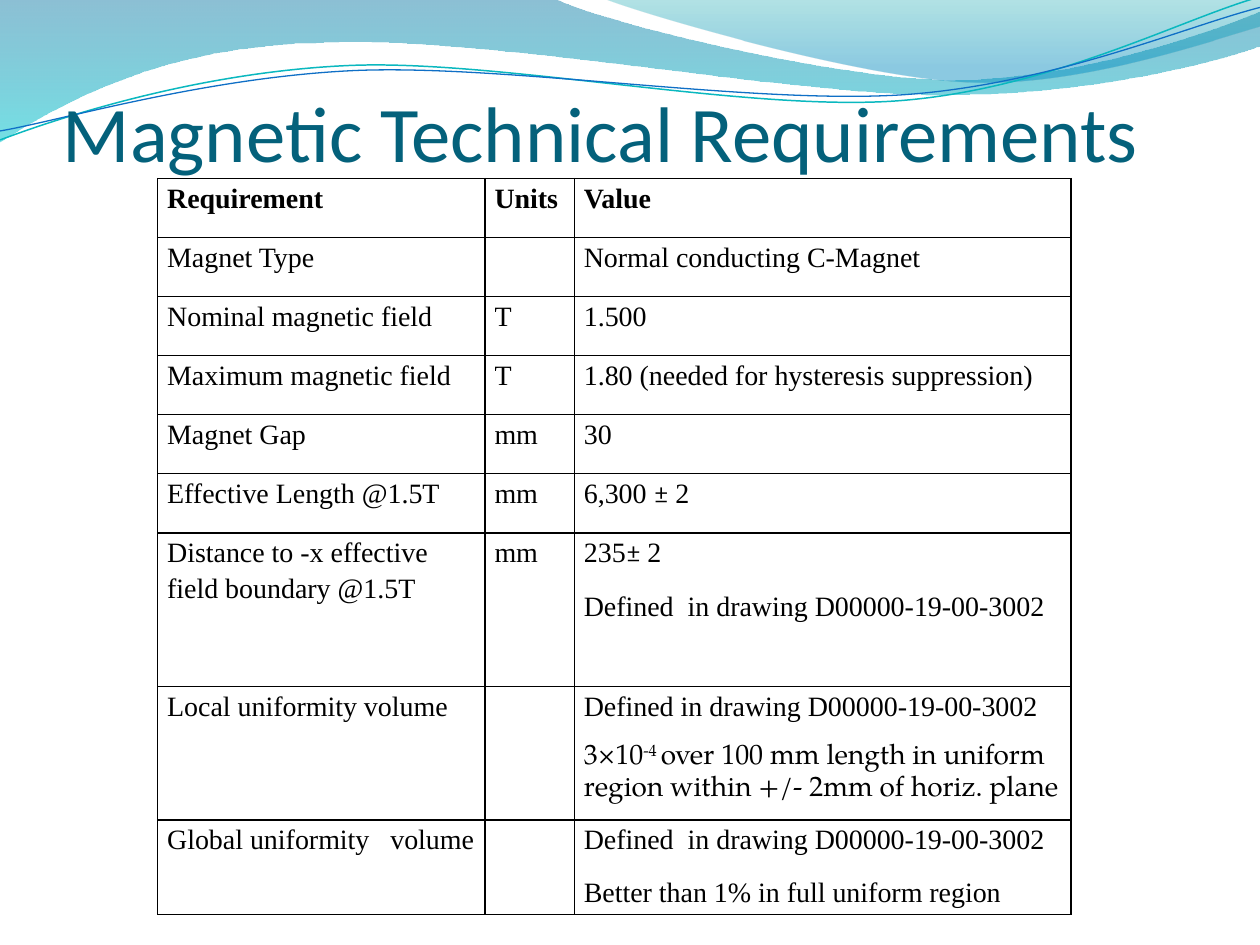
import math
from dataclasses import dataclass

from lxml import etree
from pptx import Presentation
from pptx.dml.color import RGBColor
from pptx.enum import text as text_enum
from pptx.oxml import ns
from pptx.util import Cm, Pt


@dataclass(frozen=True)
class Theme:
    """Colours, fonts and type sizes of the slide."""
    title: str = "04617B"
    ink: str = "000000"
    teal_line: str = "0AB8BF"
    blue_line: str = "0F6FC6"
    left_wave: tuple = ((0, "0074A1", 45), (1, "00C6CF", 55))
    right_wave: tuple = ((0, "00A1A9", 30), (0.8, "008BBF", 45))
    title_font: str = "Calibri"
    body_font: str = "Times New Roman"
    sign_font: str = "Cambria"
    note_font: str = "TeX Gyre Pagella"
    title_size: int = 45
    body_size: int = 16
    border: float = 1


THEME = Theme()

CURVE_TILT = 2.7
LEFT_WAVE = [(0, -0.03), (11.18, -0.03),
             (12.09, 0.43, 16.87, 1.6, 19.25, 1.6),
             (21.67, 1.6, 24.33, 0.66, 25.4, 0.23), (25.43, 0.91),
             (24.97, 1.12, 22.1, 1.93, 18.95, 1.91),
             (15.8, 1.91, 9.7, 0.71, 6.53, 0.86),
             (3.28, 0.89, 1.17, 2.11, -0.03, 2.87), (0, -0.03)]
RIGHT_WAVE = [(12.17, -0.03), (12.93, 0.28, 17.32, 1.57, 19.53, 1.65),
              (21.74, 1.75, 24.41, 0.81, 25.4, 0.53), (25.4, 0), (12.17, -0.03)]
TEAL_CURVE = [(0, 2.82), (1.22, 2.36, 4.01, 1.45, 7.04, 1.32),
              (10.03, 1.19, 15.06, 2.26, 18.11, 2.03),
              (21.16, 1.8, 23.83, 0.38, 25.35, -0.05)]
BLUE_CURVE = [(0, 2.64), (1.19, 2.44, 4.17, 1.55, 7.19, 1.42),
              (10.24, 1.3, 15.16, 2.11, 18.21, 1.91),
              (21.23, 1.7, 23.9, 0.53, 25.4, 0.15)]

PLUS_MINUS = ("± ", {"name": THEME.sign_font})
NOTE = {"name": THEME.note_font}
COLUMNS = (6.6, 1.8, 10.01)
ROW_HEIGHTS = [1.19] * 6 + [3.1, 2.36, 1.8]
ROWS = [
    ("Requirement", "Units", ["Value"]),
    ("Magnet Type", "", ["Normal conducting C-Magnet"]),
    ("Nominal magnetic field", "T", ["1.500"]),
    ("Maximum magnetic field", "T", ["1.80 (needed for hysteresis suppression)"]),
    ("Magnet Gap", "mm", ["30"]),
    ("Effective Length @1.5T", "mm", [[("6,300 ", {}), PLUS_MINUS, ("2", {})]]),
    ("Distance to -x effective field boundary @1.5T", "mm",
     [[("235", {}), PLUS_MINUS, ("2", {})],
      "Defined  in drawing D00000-19-00-3002"]),
    ("Local uniformity volume", "",
     ["Defined in drawing D00000-19-00-3002",
      [("3×10", NOTE), ("-4 ", {**NOTE, "superscript": True}),
       ("over 100 mm length in uniform region within +/- 2mm of horiz. plane", NOTE)]]),
    ("Global uniformity   volume", "",
     ["Defined  in drawing D00000-19-00-3002",
      "Better than 1% in full uniform region"]),
]


def apply_format(target, values):
    """Set each named attribute on the target."""
    for name, value in values.items():
        setattr(target, name, value)


def turn(segment, degrees, centre=(12.67, 1.46)):
    """Turn the points of a segment about a centre, giving (x, y) lengths."""
    sine, cosine = math.sin(math.radians(degrees)), math.cos(math.radians(degrees))
    points = []
    for x, y in zip(segment[::2], segment[1::2]):
        x, y = x - centre[0], y - centre[1]
        points.append((Cm(centre[0] + x * cosine - y * sine),
                       Cm(centre[1] + x * sine + y * cosine)))
    return points


def add_outline(slide, segments, close, tilt=0):
    """Add a freeform of straight and cubic segments without shadow."""
    turned = [turn(segment, tilt) for segment in segments]
    ends = [points[-1] for points in turned]
    builder = slide.shapes.build_freeform(*ends[0])
    builder.add_line_segments(ends[1:], close=close)
    shape = builder.convert_to_shape()
    shape.shadow.inherit = False
    left, top = (min(axis) for axis in zip(*ends))
    lines = list(shape._element.iter(ns.qn("a:lnTo")))
    for line, points in zip(lines, turned[1:]):
        if len(points) == 3:
            cubic = etree.Element(ns.qn("a:cubicBezTo"))
            for x, y in points:
                etree.SubElement(cubic, ns.qn("a:pt"), x=str(x - left), y=str(y - top))
            line.getparent().replace(line, cubic)
    shape.rotation = -tilt
    return shape


def add_wave(slide, segments, stops):
    """Add a closed wave with a translucent vertical gradient."""
    shape = add_outline(slide, segments, True)
    shape.line.fill.background()
    shape.fill.gradient()
    shape.fill.gradient_angle = 270
    for stop, (position, colour, _) in zip(shape.fill.gradient_stops, stops):
        stop.position = position
        stop.color.rgb = RGBColor.from_string(colour)
    for node, (_, _, opacity) in zip(shape._element.iter(ns.qn("a:srgbClr")), stops):
        etree.SubElement(node, ns.qn("a:alpha"), val=str(opacity * 1000))


def add_curve(slide, segments, colour, width):
    """Add an open, tilted curved line."""
    shape = add_outline(slide, segments, False, CURVE_TILT)
    shape.fill.background()
    shape.line.color.rgb = RGBColor.from_string(colour)
    shape.line.width = Pt(width)


def add_run(paragraph, content, colour, values):
    """Add one formatted run."""
    run = paragraph.add_run()
    run.text = content
    values = dict(values)
    if values.pop("superscript", False):
        run._r.get_or_add_rPr().set("baseline", "30000")
    apply_format(run.font, values)
    run.font.color.rgb = RGBColor.from_string(colour)


def add_title(slide, content):
    """Add the bottom-anchored title."""
    frame = slide.shapes.add_textbox(Cm(1.27), Cm(0.85), Cm(22.86), Cm(2.74)).text_frame
    apply_format(frame, {"word_wrap": True, "margin_left": 0, "margin_right": 0,
                         "margin_top": Cm(0.13), "margin_bottom": 0,
                         "vertical_anchor": text_enum.MSO_ANCHOR.BOTTOM})
    add_run(frame.paragraphs[0], content, THEME.title,
            {"name": THEME.title_font, "size": Pt(THEME.title_size)})


def style_cell(cell):
    """Give a cell its margins, borders and empty fill."""
    apply_format(cell, {"margin_left": Cm(0.19), "margin_right": Cm(0.19),
                        "margin_top": 0, "margin_bottom": 0})
    properties = cell._tc.get_or_add_tcPr()
    for side in "LRTB":
        line = etree.SubElement(properties, ns.qn(f"a:ln{side}"), w=str(Pt(THEME.border)))
        fill = etree.SubElement(line, ns.qn("a:solidFill"))
        etree.SubElement(fill, ns.qn("a:srgbClr"), val=THEME.ink)
    cell.fill.background()


def fill_cell(cell, paragraphs, bold):
    """Write paragraphs, each a string or a list of runs, into a cell."""
    base = {"name": THEME.body_font, "size": Pt(THEME.body_size), "bold": bold}
    frame = cell.text_frame
    for index, content in enumerate(paragraphs):
        paragraph = frame.add_paragraph() if index else frame.paragraphs[0]
        apply_format(paragraph, {"line_spacing": 1.15, "space_after": Pt(0 if index else 10)})
        runs = [(content, {})] if isinstance(content, str) else content
        for words, values in runs:
            if words:
                add_run(paragraph, words, THEME.ink, {**base, **values})


def add_requirements(slide):
    """Add the table of requirements."""
    table = slide.shapes.add_table(len(ROWS), len(COLUMNS), Cm(3.18), Cm(3.6),
                                   Cm(sum(COLUMNS)), Cm(sum(ROW_HEIGHTS))).table
    apply_format(table, {"first_row": False, "horz_banding": False})
    for column, width in zip(table.columns, COLUMNS):
        column.width = Cm(width)
    for index, (row, height, entry) in enumerate(zip(table.rows, ROW_HEIGHTS, ROWS)):
        row.height = Cm(height)
        requirement, unit, values = entry
        for cell, paragraphs in zip(row.cells, ([requirement], [unit], values)):
            style_cell(cell)
            fill_cell(cell, paragraphs, index == 0)


def main():
    """Build and save the slide."""
    presentation = Presentation()
    apply_format(presentation, {"slide_width": Cm(25.4), "slide_height": Cm(19.05)})
    slide = presentation.slides.add_slide(presentation.slide_layouts[6])
    add_wave(slide, LEFT_WAVE, THEME.left_wave)
    add_wave(slide, RIGHT_WAVE, THEME.right_wave)
    add_curve(slide, TEAL_CURVE, THEME.teal_line, 0.85)
    add_curve(slide, BLUE_CURVE, THEME.blue_line, 0.75)
    add_title(slide, "Magnetic Technical Requirements")
    add_requirements(slide)
    presentation.save("out.pptx")


if __name__ == "__main__":
    main()
